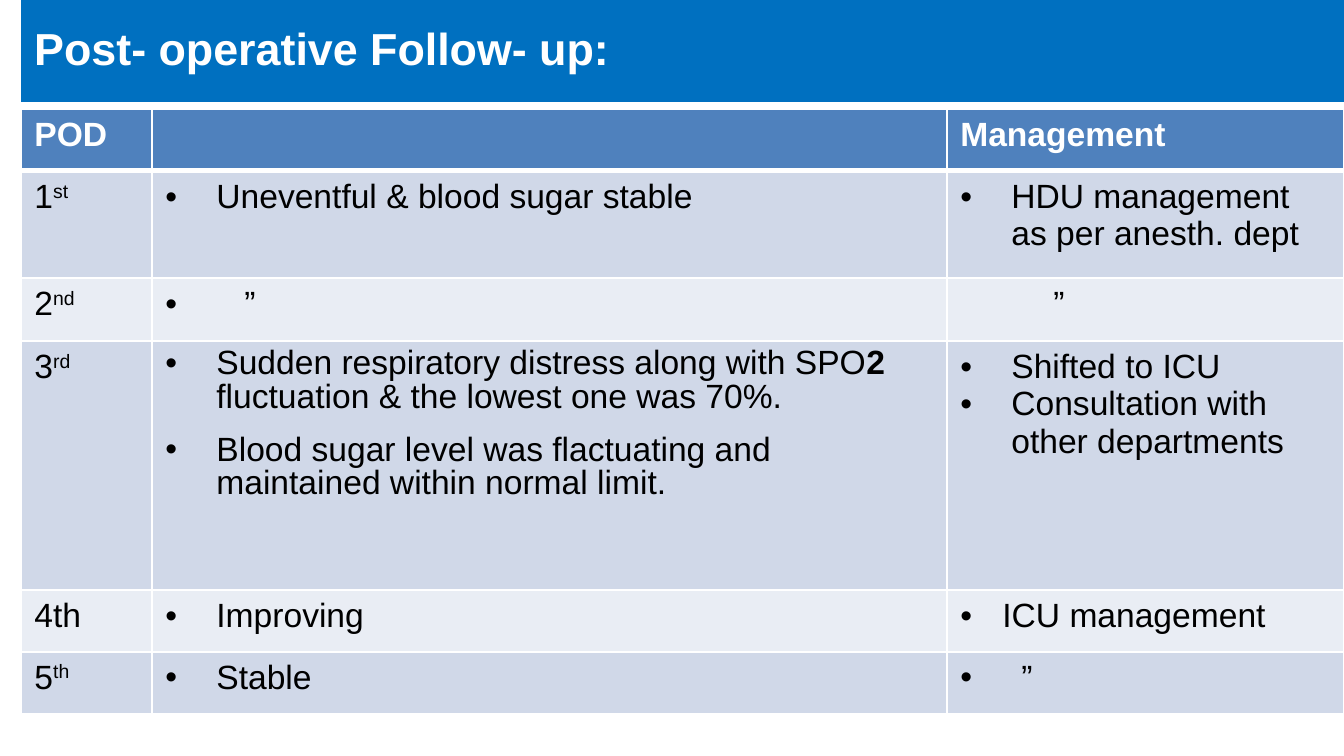
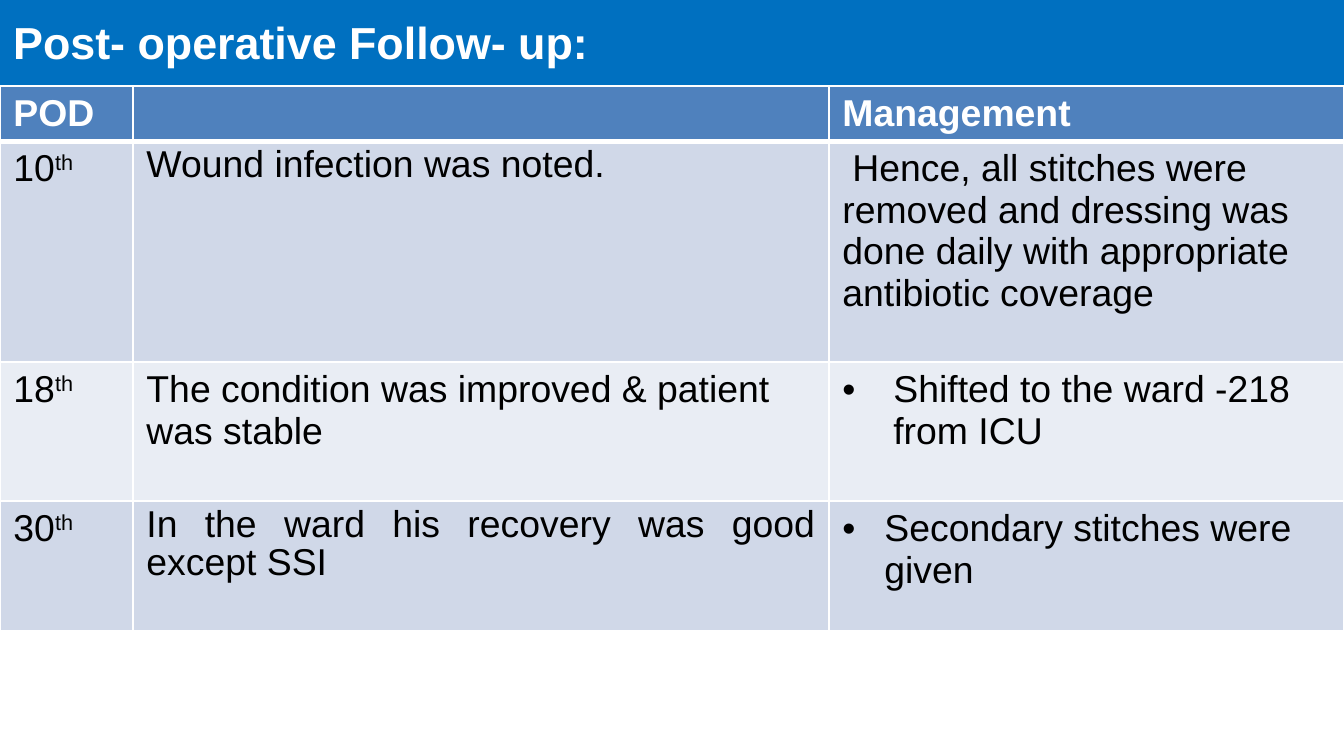
from lxml import etree
from pptx import Presentation
from pptx.dml.color import RGBColor
from pptx.enum.shapes import MSO_SHAPE
from pptx.enum.text import MSO_ANCHOR, PP_ALIGN
from pptx.oxml.ns import qn
from pptx.util import Emu, Pt

RECTANGLE = MSO_SHAPE.RECTANGLE
MIDDLE = MSO_ANCHOR.MIDDLE
LEFT, JUSTIFY = PP_ALIGN.LEFT, PP_ALIGN.JUSTIFY

# Content: a cell is a list of (text, format) paragraphs;
# a text is a string or a list of (words, style) spans.
TITLE = "Post- operative Follow- up:"
HEADINGS = ["POD", "", "Management"]

WIDE = {"bullet": True, "left": 51, "hang": -51}
NARROW = {"bullet": True, "left": 42, "hang": -42}
TIGHT = {"spacing": 0.9}

SLIDES = [
    {
        "band": (21, 0, 1323, 102), "table": (21, 109), "size": 18,
        "columns": [131, 795, 397],
        "heights": [62, 107, 63, 249, 62, 62],
        "rows": [
            [("1", "st"),
             [("Uneventful & blood sugar stable", WIDE)],
             [("HDU management as per anesth. dept", WIDE)]],
            [("2", "nd"),
             [("”", {"bullet": True, "left": 79, "hang": -79})],
             [("”", {"left": 93})]],
            [("3", "rd"),
             [([("Sudden respiratory distress along with SPO", ""),
                ("2", "bold"),
                (" fluctuation & the lowest one was 70%.", "")],
               WIDE | TIGHT),
              ("Blood sugar level was flactuating and maintained within "
               "normal limit.", WIDE | TIGHT | {"before": 10})],
             [("Shifted to ICU", WIDE),
              ("Consultation with other departments", WIDE)]],
            [("4th", ""),
             [("Improving", WIDE)],
             [("ICU management", NARROW)]],
            [("5", "th"),
             [("Stable", WIDE)],
             [("”", {"bullet": True, "left": 61, "hang": -61})]],
        ],
    },
    {
        "band": (0, 0, 1344, 90), "table": (0, 86), "size": 20,
        "columns": [133, 696, 515],
        "heights": [55, 221, 139, 130],
        "rows": [
            [("10", "th"),
             [("Wound infection was noted.", TIGHT)],
             [("Hence, all stitches were removed and dressing was done daily "
               "with appropriate antibiotic coverage", {"hang": 10})]],
            [("18", "th"),
             [("The condition was improved & patient was stable", {})],
             [("Shifted to the ward -218 from ICU", WIDE)]],
            [("30", "th"),
             [("In the ward his recovery was good except SSI",
               TIGHT | {"align": JUSTIFY})],
             [("Secondary stitches were given", NARROW)]],
        ],
    },
]

# Shared look
FONT = "Arial"
BAND, HEADER = "0070C0", "4F81BD"
STRIPES = ["D0D8E8", "E9EDF4"]
WHITE, BLACK = "FFFFFF", "000000"
SCALE = 914400 / 134.4


def px(length):
    return Emu(round(length * SCALE))


def color(code):
    return RGBColor.from_string(code)


def fill(part, code):
    part.fill.solid()
    part.fill.fore_color.rgb = color(code)


def write(para, text, size, ink=BLACK, bold=False, bullet=False, left=0,
          hang=0, spacing=None, before=None, align=LEFT):
    """Fill one paragraph with formatted spans."""
    properties = para._p.get_or_add_pPr()
    properties.set("marL", str(px(left)))
    properties.set("indent", str(px(hang)))
    if bullet:
        etree.SubElement(properties, qn("a:buFont"), typeface=FONT)
        etree.SubElement(properties, qn("a:buChar"), char="•")
    para.alignment = align
    if spacing:
        para.line_spacing = spacing
    if before:
        para.space_before = Pt(before)
    spans = [(text, "")] if isinstance(text, str) else text
    for words, style in spans:
        if not words:
            continue
        span = para.add_run()
        span.text = words
        span.font.name = FONT
        span.font.size = Pt(size)
        span.font.bold = bold or style == "bold"
        span.font.color.rgb = color(ink)
        if style == "super":
            span._r.get_or_add_rPr().set("baseline", "30000")


def set_borders(cell, top=1, bottom=1):
    properties = cell._tc.get_or_add_tcPr()
    for side, points in (("L", 1), ("R", 1), ("T", top), ("B", bottom)):
        line = etree.SubElement(properties, qn(f"a:ln{side}"),
                                w=str(Pt(points)))
        solid = etree.SubElement(line, qn("a:solidFill"))
        etree.SubElement(solid, qn("a:srgbClr"), val=WHITE)


def add_title(page, frame):
    box = page.shapes.add_shape(RECTANGLE, *map(px, frame))
    box.shadow.inherit = False
    box.line.fill.background()
    fill(box, BAND)
    box.text_frame.word_wrap = True
    box.text_frame.vertical_anchor = MIDDLE
    write(box.text_frame.paragraphs[0], TITLE, 24, ink=WHITE, bold=True,
          spacing=0.9)


def add_follow_up(page, content):
    columns, heights = content["columns"], content["heights"]
    frame = (*content["table"], sum(columns), sum(heights))
    table = page.shapes.add_table(len(heights), len(columns),
                                  *map(px, frame)).table
    table.horz_banding = False
    for column, width in zip(table.columns, columns):
        column.width = px(width)
    for row, height in zip(table.rows, heights):
        row.height = px(height)

    # Header row
    for index, heading in enumerate(HEADINGS):
        cell = table.cell(0, index)
        set_borders(cell, bottom=3)
        fill(cell, HEADER)
        write(cell.text_frame.paragraphs[0], heading, content["size"],
              ink=WHITE, bold=True)

    # Striped day rows
    for number, (day, *others) in enumerate(content["rows"], start=1):
        ordinal = [(day[0], ""), (day[1], "super")]
        for index, paragraphs in enumerate([[(ordinal, {})], *others]):
            cell = table.cell(number, index)
            set_borders(cell, top=3 if number == 1 else 1)
            fill(cell, STRIPES[(number - 1) % 2])
            for place, (text, style) in enumerate(paragraphs):
                body = cell.text_frame
                para = body.add_paragraph() if place else body.paragraphs[0]
                write(para, text, content["size"], **style)


def main():
    deck = Presentation()
    deck.slide_width, deck.slide_height = px(1344), px(756)
    for content in SLIDES:
        page = deck.slides.add_slide(deck.slide_layouts[6])
        add_title(page, content["band"])
        add_follow_up(page, content)
    deck.save("out.pptx")


if __name__ == "__main__":
    main()
